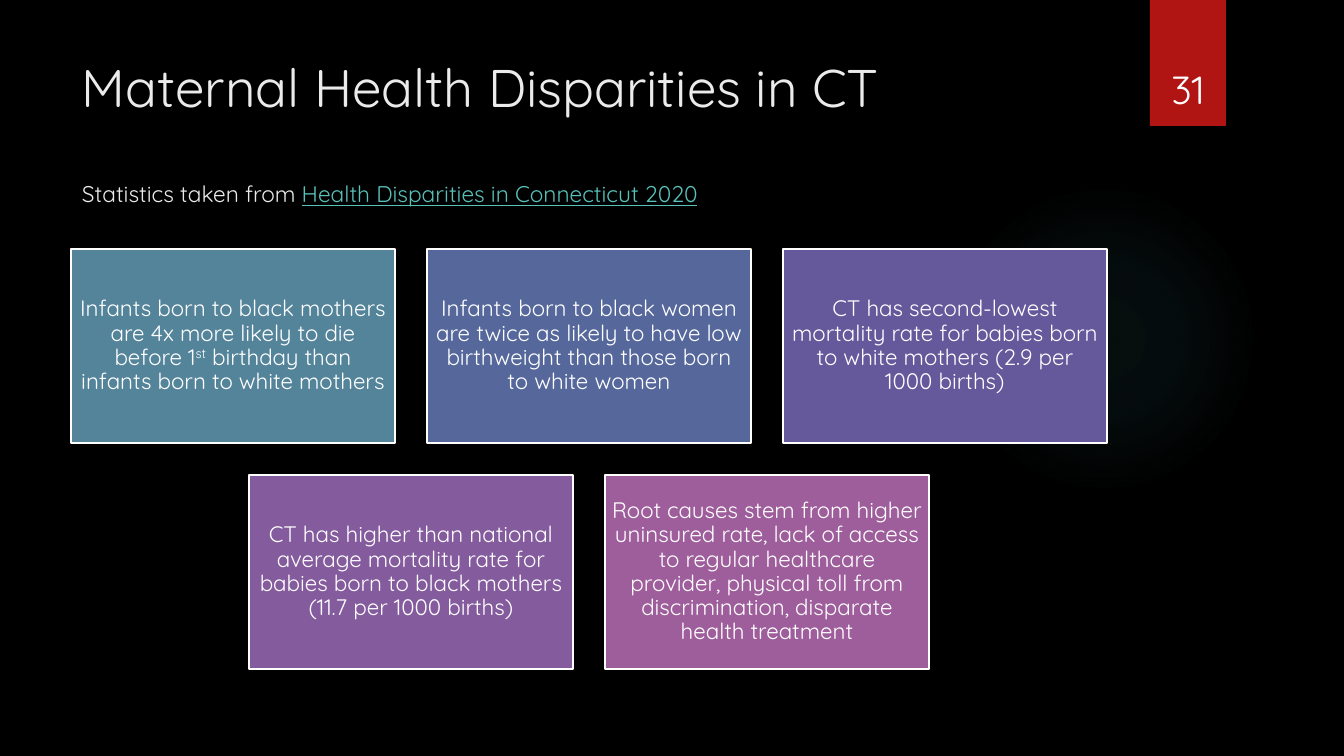
from lxml import etree
from pptx import Presentation
from pptx.dml.color import RGBColor
from pptx.enum.shapes import MSO_SHAPE
from pptx.enum.text import MSO_ANCHOR, PP_ALIGN
from pptx.oxml.ns import qn
from pptx.util import Pt

PX = 914400 / 100.8
FONT = "Quicksand"
WHITE = "FFFFFF"
RECTANGLE, OVAL = MSO_SHAPE.RECTANGLE, MSO_SHAPE.OVAL
CENTER = PP_ALIGN.CENTER
MIDDLE, BOTTOM = MSO_ANCHOR.MIDDLE, MSO_ANCHOR.BOTTOM

CARD_ROWS = [
    [
        ("54849A", ["Infants born to black mothers are 4x more likely to die before 1", "st",
                    " birthday than infants born to white mothers"]),
        ("56689B", ["Infants born to black women are twice as likely to have low "
                    "birthweight than those born to white women"]),
        ("65599C", ["CT has second-lowest mortality rate for babies born to white "
                    "mothers (2.9 per 1000 births)"]),
    ],
    [
        ("845B9D", ["CT has higher than national average mortality rate for babies born "
                    "to black mothers (11.7 per 1000 births)"]),
        ("9E5E9B", ["Root causes stem from higher uninsured rate, lack of access to "
                    "regular healthcare provider, physical toll from discrimination, "
                    "disparate health treatment"]),
    ],
]


def px(length):
    return round(length * PX)


def color(hex_code):
    return RGBColor.from_string(hex_code)


def add_run(paragraph, text, size, hex_code):
    run = paragraph.add_run()
    run.text = text
    run.font.name = FONT
    run.font.size = Pt(size)
    run.font.color.rgb = color(hex_code)
    return run


def add_block(slide, preset, box, fill):
    block = slide.shapes.add_shape(preset, *map(px, box))
    block.shadow.inherit = False
    block.fill.solid()
    block.fill.fore_color.rgb = color(fill)
    block.line.fill.background()
    return block


def add_glow(slide, box):
    """Place a faint circle that fades out towards its rim."""
    glow = add_block(slide, OVAL, box, "50B9C1")
    solid = glow._element.spPr.find(qn("a:solidFill"))
    gradient = etree.Element(qn("a:gradFill"), rotWithShape="1")
    stops = etree.SubElement(gradient, qn("a:gsLst"))
    for position, opacity in ((0, 7), (36, 6), (69, 0)):
        stop = etree.SubElement(stops, qn("a:gs"), pos=str(position * 1000))
        tint = etree.SubElement(stop, qn("a:srgbClr"), val="50B9C1")
        etree.SubElement(tint, qn("a:alpha"), val=str(opacity * 1000))
    circle = etree.SubElement(gradient, qn("a:path"), path="circle")
    etree.SubElement(circle, qn("a:fillToRect"), l="50000", t="50000", r="50000", b="50000")
    solid.getparent().replace(solid, gradient)


def add_page_number(slide, box, number):
    left, top, width, height = box
    add_block(slide, RECTANGLE, box, "B01513")
    label = slide.shapes.add_textbox(px(left - 9), px(top + 32), px(width + 18), px(height - 41))
    frame = label.text_frame
    frame.word_wrap = True
    frame.vertical_anchor = BOTTOM
    paragraph = frame.paragraphs[0]
    paragraph.alignment = CENTER
    add_run(paragraph, number, 28, WHITE)


def add_heading(slide, box):
    frame = slide.shapes.add_textbox(*map(px, box)).text_frame
    frame.word_wrap = True
    add_run(frame.paragraphs[0], "Maternal Health Disparities in CT", 37.8, "EBEBEB")
    source_line = frame.add_paragraph()
    source_line.space_before = Pt(44)
    add_run(source_line, "Statistics taken from ", 16.2, "EBEBEB")
    report = add_run(source_line, "Health Disparities in Connecticut 2020", 16.2, "58C1BA")
    report.font.underline = True


def add_card(slide, box, fill, parts):
    """Draw one statistic; every second text part is superscript."""
    card = add_block(slide, RECTANGLE, box, fill)
    card.line.color.rgb = color(WHITE)
    card.line.width = Pt(1.5)
    frame = card.text_frame
    frame.word_wrap = True
    frame.vertical_anchor = MIDDLE
    frame.margin_left = frame.margin_right = frame.margin_top = frame.margin_bottom = px(7)
    paragraph = frame.paragraphs[0]
    paragraph.alignment = CENTER
    paragraph.line_spacing = 0.9
    for index, part in enumerate(parts):
        run = add_run(paragraph, part, 16, WHITE)
        if index % 2:
            run._r.get_or_add_rPr().set("baseline", "30000")


def add_cards(slide, box, gap=32):
    """Fill the box with equal cards, each row centred."""
    left, top, width, height = box
    columns = max(map(len, CARD_ROWS))
    card_width = (width - gap * (columns - 1)) // columns
    card_height = (height - gap * (len(CARD_ROWS) - 1)) // len(CARD_ROWS)
    for row, cards in enumerate(CARD_ROWS):
        row_width = len(cards) * (card_width + gap) - gap
        row_left = left + (width - row_width) // 2
        for column, (fill, parts) in enumerate(cards):
            x = row_left + column * (card_width + gap)
            y = top + row * (card_height + gap)
            add_card(slide, (x, y, card_width, card_height), fill, parts)


def main():
    deck = Presentation()
    deck.slide_width, deck.slide_height = px(1344), px(756)
    slide = deck.slides.add_slide(deck.slide_layouts[6])
    slide.background.fill.solid()
    slide.background.fill.fore_color.rgb = color("000000")
    add_glow(slide, (949, 184, 310, 310))
    add_page_number(slide, (1150, 0, 76, 126), "31")
    add_heading(slide, (72, 50, 1037, 154))
    add_cards(slide, (71, 249, 1037, 421))
    deck.save("out.pptx")


if __name__ == "__main__":
    main()
